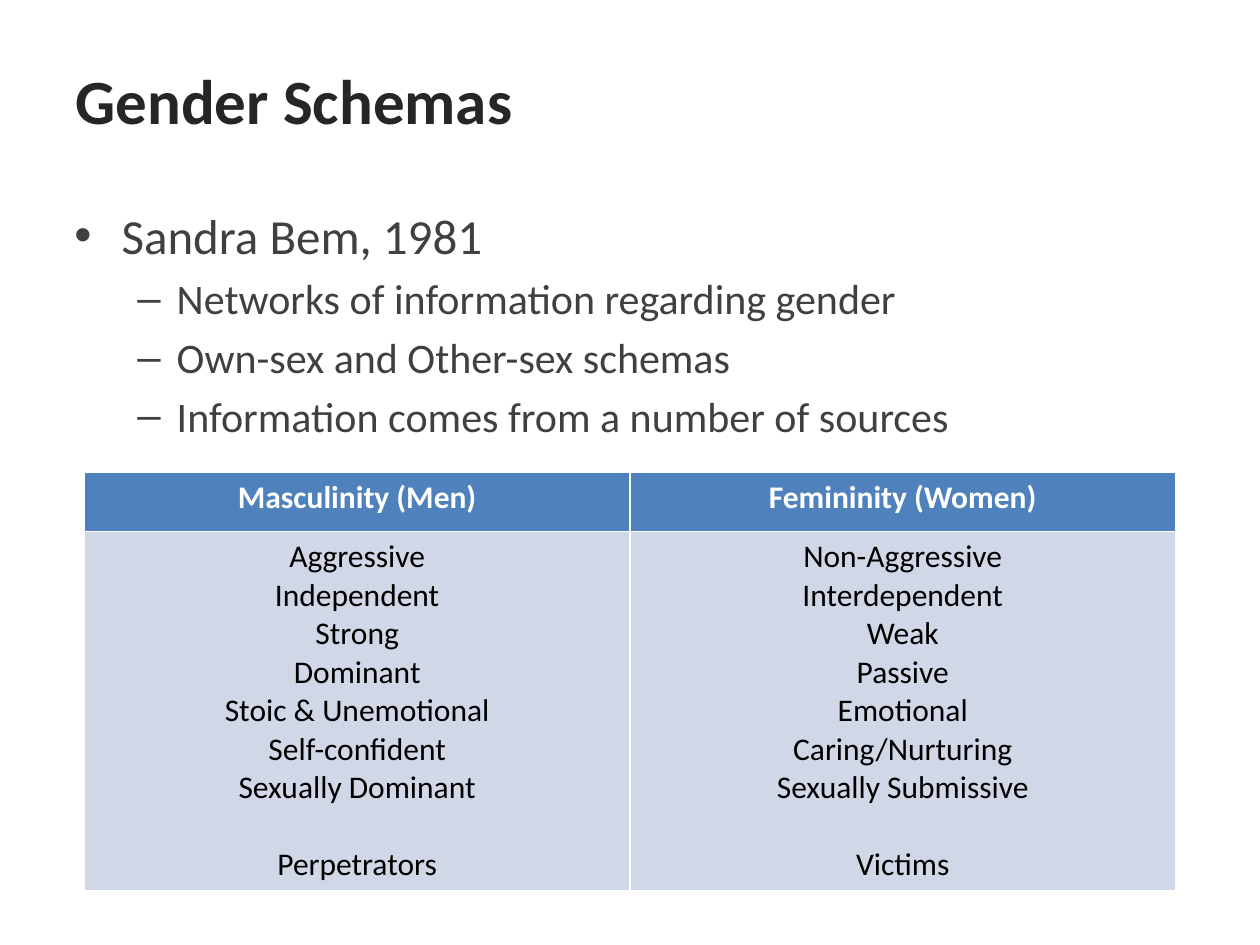
"""Build the Gender Schemas slide with a title, a list and a comparison table."""
from dataclasses import dataclass

from pptx import Presentation
from pptx import util as u
from pptx.dml.color import RGBColor
from pptx.enum import text

WIDTH, HEIGHT = 10, 7.5
POINTS = [
    ("Sandra Bem, 1981", 0),
    ("Networks of information regarding gender", 1),
    ("Own-sex and Other-sex schemas", 1),
    ("Information comes from a number of sources", 1),
]
TRAITS = {
    "Masculinity (Men)": ["Aggressive", "Independent", "Strong", "Dominant", "Stoic & Unemotional",
                          "Self-confident", "Sexually Dominant", "Perpetrators"],
    "Femininity (Women)": ["Non-Aggressive", "Interdependent", "Weak", "Passive", "Emotional",
                           "Caring/Nurturing", "Sexually Submissive", "Victims"],
}


def color(value):
    return RGBColor.from_string(value)


@dataclass
class Page:
    slide: object
    face: str = "Calibri"
    heading: str = "262626"
    body: str = "404040"
    header_fill: str = "4F81BD"
    cell_fill: str = "D0D8E8"

    def place(self, shape, left, top, width, height):
        shape.left, shape.width = (u.Inches(share * WIDTH) for share in (left, width))
        shape.top, shape.height = (u.Inches(share * HEIGHT) for share in (top, height))

    def style(self, para, size, shade, bold=False):
        para.font.name = self.face
        para.font.size = u.Pt(size)
        para.font.bold = bold
        para.font.color.rgb = color(shade)

    def title(self, words, *area):
        box = self.slide.shapes.title
        self.place(box, *area)
        box.text_frame.text = words
        box.text_frame.vertical_anchor = text.MSO_ANCHOR.MIDDLE
        para = box.text_frame.paragraphs[0]
        para.alignment = text.PP_ALIGN.LEFT
        self.style(para, 36, self.heading, bold=True)

    def bullets(self, points, *area):
        box = self.slide.placeholders[1]
        self.place(box, *area)
        frame = box.text_frame
        frame.text = "\n".join(words for words, level in points)
        for para, (words, level) in zip(frame.paragraphs, points):
            para.level = level
            self.style(para, (28, 24)[level], self.body)
        frame.paragraphs[0].space_before = u.Pt(0)

    def cell(self, cell, lines, fill, shade, bold=False):
        cell.fill.solid()
        cell.fill.fore_color.rgb = color(fill)
        cell.text_frame.text = "\n".join(lines)
        for para in cell.text_frame.paragraphs:
            para.alignment = text.PP_ALIGN.CENTER
            self.style(para, 18, shade, bold)

    def table(self, columns, header_share, left, top, width, height):
        frame = self.slide.shapes.add_table(2, len(columns), 0, 0, u.Inches(width * WIDTH),
                                            u.Inches(height * HEIGHT))
        self.place(frame, left, top, width, height)
        table = frame.table
        table.rows[0].height = u.Inches(header_share * HEIGHT)
        table.rows[1].height = u.Inches((height - header_share) * HEIGHT)
        for index, (name, traits) in enumerate(columns.items()):
            self.cell(table.cell(0, index), [name], self.header_fill, "FFFFFF", bold=True)
            self.cell(table.cell(1, index), traits, self.cell_fill, "000000")
            table.cell(1, index).text_frame.paragraphs[-1].space_before = u.Pt(22)


def main():
    deck = Presentation()
    deck.slide_width, deck.slide_height = u.Inches(WIDTH), u.Inches(HEIGHT)
    page = Page(deck.slides.add_slide(deck.slide_layouts[1]))
    page.title("Gender Schemas", 0.05, 0.16 / HEIGHT, 0.9, 1.25 / HEIGHT)
    page.bullets(POINTS, 0.049, 1.58 / HEIGHT, 0.9, 0.66)
    page.table(TRAITS, 0.47 / HEIGHT, 0.067, 0.5, 0.866, 3.3 / HEIGHT)
    deck.save("out.pptx")


if __name__ == "__main__":
    main()
